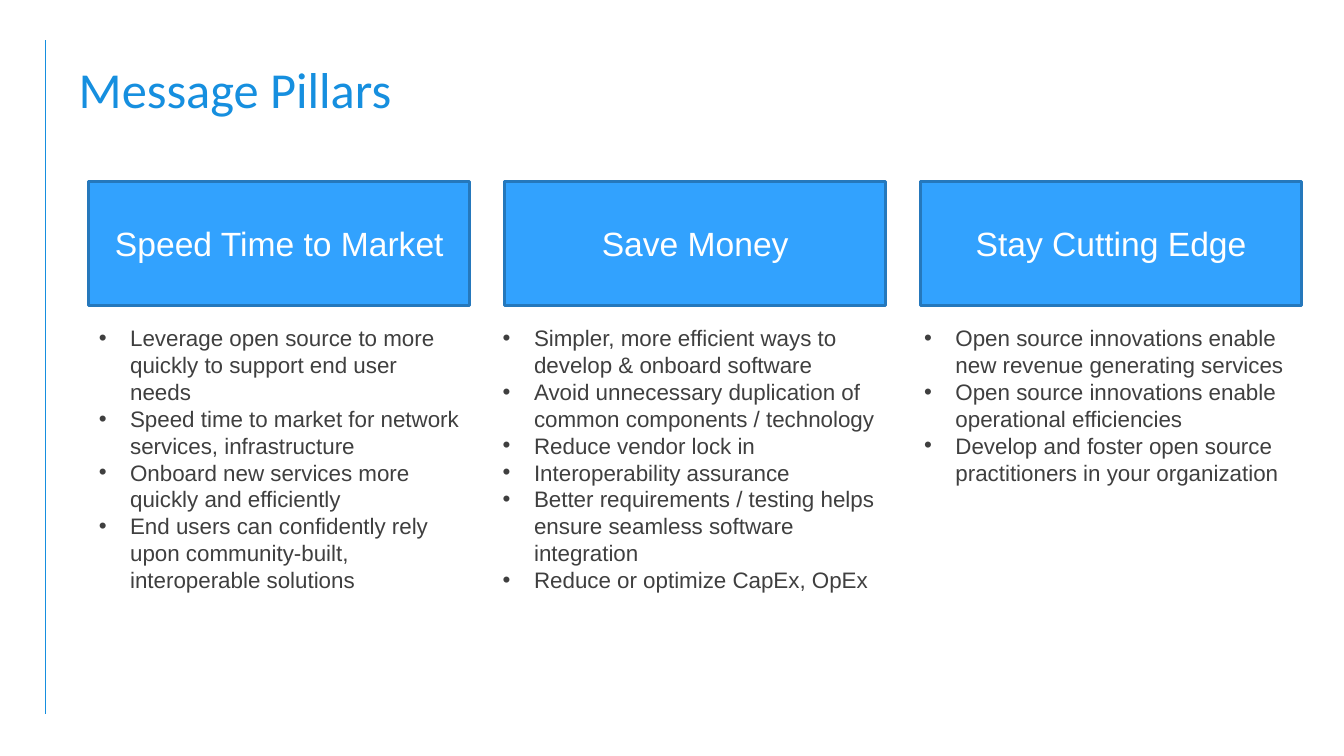
"""Builds the Message Pillars slide with three headed bullet columns."""
import pptx
import pptx.util
import pptx.dml.color
import pptx.enum.shapes
import pptx.enum.text
import pptx.oxml.ns
from lxml import etree

Cm = pptx.util.Cm
COLORS = {"accent": "168FDF", "fill": "32A2FE", "edge": "2578BC",
          "white": "FFFFFF", "body": "3F3F3F"}
FIRST_LEFT, PITCH, PILLAR_WIDTH = 2.24, 10.48, 9.6
PILLAR_TOP, PILLAR_HEIGHT, POINTS_TOP = 4.57, 3.12, 8.05
INDENT = Cm(0.79)
PILLARS = [
    ("Speed Time to Market", 2.24, 9.6, 7.09, [
        "Leverage open source to more quickly to support end user needs",
        "Speed time to market for network services, infrastructure",
        "Onboard new services more quickly and efficiently",
        "End users can confidently rely upon community-built, interoperable solutions"]),
    ("Save Money", 12.42, 9.9, 7.09, [
        "Simpler, more efficient ways to develop & onboard software",
        "Avoid unnecessary duplication of common components / technology",
        "Reduce vendor lock in",
        "Interoperability assurance",
        "Better requirements / testing helps ensure seamless software integration",
        "Reduce or optimize CapEx, OpEx"]),
    ("Stay Cutting Edge", 23.04, 9.9, 4.37, [
        "Open source innovations enable new revenue generating services",
        "Open source innovations enable operational efficiencies",
        "Develop and foster open source practitioners in your organization"]),
]


def color(name):
    return pptx.dml.color.RGBColor.from_string(COLORS[name])


def add_bullet(paragraph):
    properties = paragraph._p.get_or_add_pPr()
    properties.set("marL", str(INDENT))
    properties.set("indent", str(-INDENT))
    for tag, key, value in (("a:buFont", "typeface", "Arial"), ("a:buChar", "char", "•")):
        etree.SubElement(properties, pptx.oxml.ns.qn(tag)).set(key, value)


def write(frame, lines, *, size, ink, font="Arial", align="LEFT", anchor="TOP",
          spacing=1.0, bulleted=False):
    frame.word_wrap = True
    frame.vertical_anchor = pptx.enum.text.MSO_ANCHOR[anchor]
    for number, line in enumerate(lines):
        paragraph = frame.add_paragraph() if number else frame.paragraphs[0]
        paragraph.text = line
        paragraph.alignment = pptx.enum.text.PP_ALIGN[align]
        paragraph.line_spacing = spacing
        paragraph.space_before = pptx.util.Pt(0)
        if bulleted:
            add_bullet(paragraph)
        paragraph.font.name = font
        paragraph.font.size = pptx.util.Pt(size)
        paragraph.font.color.rgb = color(ink)


def add_margin_rule(slide):
    rule = slide.shapes.add_connector(pptx.enum.shapes.MSO_CONNECTOR.STRAIGHT,
                                      Cm(1.14), Cm(1.02), Cm(1.14), Cm(17.98))
    rule.line.color.rgb = color("accent")
    rule.line.width = pptx.util.Pt(0.75)
    etree.SubElement(rule._element.spPr, pptx.oxml.ns.qn("a:effectLst"))


def set_title(slide, text):
    title = slide.shapes.title
    title.left, title.top, title.width, title.height = Cm(1.73), Cm(1.02), Cm(30.38), Cm(2.59)
    write(title.text_frame, [text], size=36, ink="accent", font="Calibri",
          anchor="MIDDLE", spacing=0.9)


def add_pillar(slide, left, heading):
    pillar = slide.shapes.add_shape(pptx.enum.shapes.MSO_SHAPE.RECTANGLE, Cm(left),
                                    Cm(PILLAR_TOP), Cm(PILLAR_WIDTH), Cm(PILLAR_HEIGHT))
    pillar.shadow.inherit = False
    pillar.fill.solid()
    pillar.fill.fore_color.rgb = color("fill")
    pillar.line.color.rgb = color("edge")
    pillar.line.width = pptx.util.Pt(2)
    write(pillar.text_frame, [heading], size=24, ink="white", align="CENTER", anchor="MIDDLE")


def add_points(slide, left, width, height, points):
    box = slide.shapes.add_textbox(Cm(left), Cm(POINTS_TOP), Cm(width), Cm(height))
    write(box.text_frame, points, size=16, ink="body", bulleted=True)
    box.text_frame.auto_size = pptx.enum.text.MSO_AUTO_SIZE.SHAPE_TO_FIT_TEXT


def main():
    deck = pptx.Presentation()
    deck.slide_width, deck.slide_height = Cm(33.87), Cm(19.05)
    slide = deck.slides.add_slide(deck.slide_layouts.get_by_name("Title Only"))
    add_margin_rule(slide)
    set_title(slide, "Message Pillars")
    for column, (heading, left, width, height, points) in enumerate(PILLARS):
        add_pillar(slide, FIRST_LEFT + column * PITCH, heading)
        add_points(slide, left, width, height, points)
    deck.save("out.pptx")


if __name__ == "__main__":
    main()
